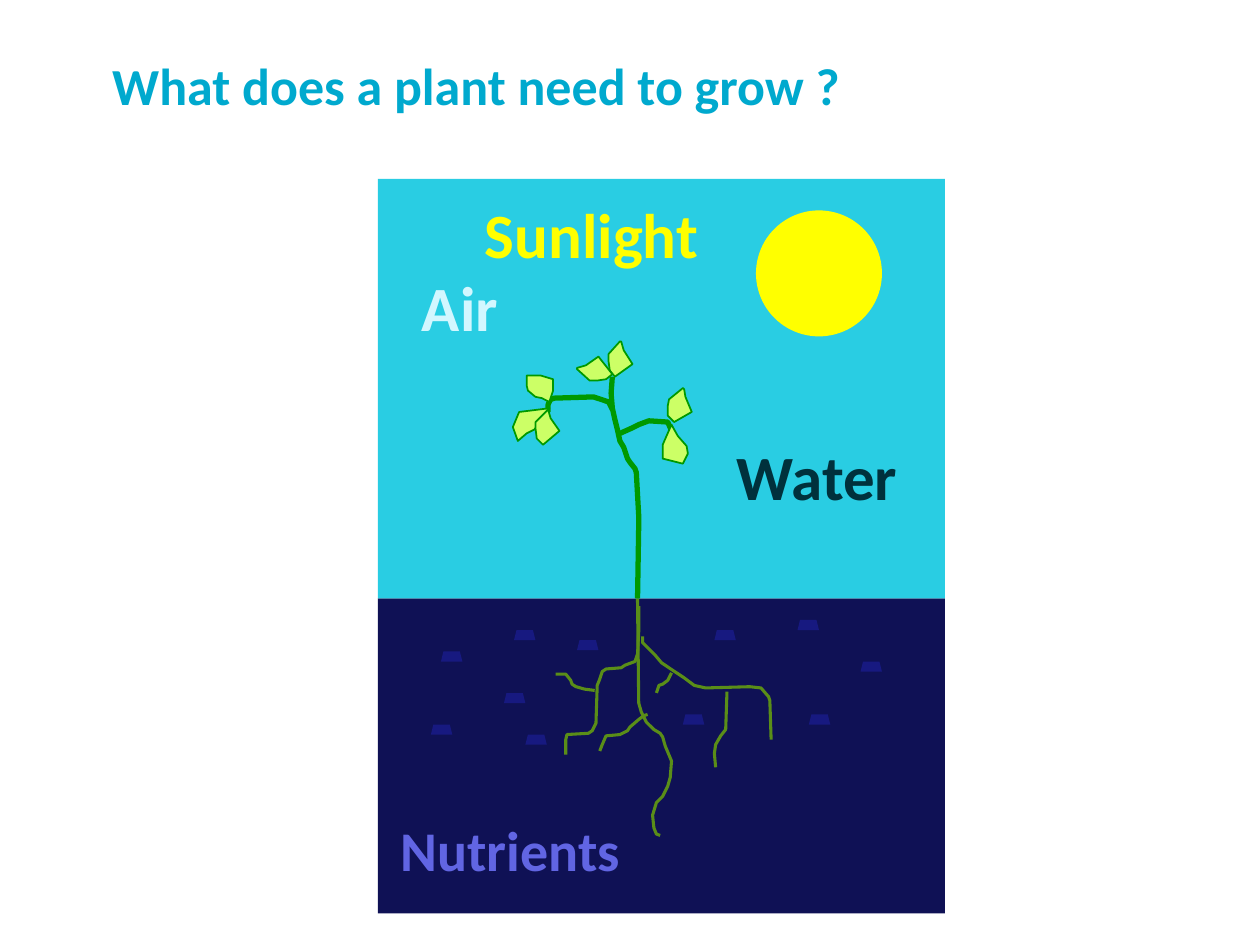
from pptx import Presentation
from pptx import util as u
from pptx.dml.color import RGBColor
from pptx.enum import shapes, text

COLORS = {
    "title": "00A9CE", "soil": "0F1155", "sky": "29CDE3", "pebble": "171980",
    "sun": "FFFF00", "air": "D2F7FF", "water": "00313C", "nutrients": "6165E3",
    "root": "5A8E18", "stem": "009900", "leaf": "CCFF66",
}
SHAPE = shapes.MSO_SHAPE


class PlantSlide:
    """Holds the style and the current slide."""

    font = "Calibri"

    def __init__(self, prs):
        self.slide = prs.slides.add_slide(prs.slide_layouts[5])

    def color(self, name):
        return RGBColor.from_string(COLORS[name])

    def style_text(self, tf, words, size, color):
        tf.text = words
        p = tf.paragraphs[0]
        p.alignment = text.PP_ALIGN.LEFT
        p.font.name = self.font
        p.font.size = u.Pt(size)
        p.font.bold = True
        p.font.color.rgb = self.color(color)

    def title(self, words, box, size):
        sp = self.slide.shapes.title
        sp.left, sp.top, sp.width, sp.height = map(u.Inches, box)
        tf = sp.text_frame
        tf.auto_size = text.MSO_AUTO_SIZE.NONE
        tf.vertical_anchor = text.MSO_ANCHOR.MIDDLE
        self.style_text(tf, words, size, "title")

    def label(self, words, box, size, color):
        tf = self.slide.shapes.add_textbox(*map(u.Inches, box)).text_frame
        tf.word_wrap = True
        tf.auto_size = text.MSO_AUTO_SIZE.SHAPE_TO_FIT_TEXT
        self.style_text(tf, words, size, color)

    def block(self, kind, box, color):
        sp = self.slide.shapes.add_shape(kind, *map(u.Inches, box))
        sp.shadow.inherit = False
        sp.fill.solid()
        sp.fill.fore_color.rgb = self.color(color)
        sp.line.fill.background()

    def outline(self, points, line, width, fill=None):
        pts = [(u.Inches(x), u.Inches(y)) for x, y in points]
        builder = self.slide.shapes.build_freeform(*pts[0])
        builder.add_line_segments(pts[1:], close=fill is not None)
        sp = builder.convert_to_shape()
        sp.shadow.inherit = False
        if fill:
            sp.fill.solid()
            sp.fill.fore_color.rgb = self.color(fill)
        else:
            sp.fill.background()
        sp.line.color.rgb = self.color(line)
        sp.line.width = u.Pt(width)


PEBBLES = [(4.08, 5), (5.67, 5), (4, 5.5), (6.33, 4.92), (3.5, 5.17), (4.58, 5.08),
           (5.42, 5.67), (3.42, 5.75), (6.83, 5.25), (4.17, 5.83), (6.42, 5.67)]

LABELS = [
    ("Nutrients", (3.08, 6.42, 2.67, 0.64), 32, "nutrients"),
    ("Sunlight", (3.75, 1.5, 2.08, 0.71), 36, "sun"),
    ("Air", (3.25, 2.08, 0.92, 0.71), 36, "air"),
    ("Water", (5.75, 3.42, 2, 0.71), 36, "water"),
]

ROOTS = [
    # left branch
    [(5.07, 4.81), (5.07, 5), (5.06, 5.19), (5.04, 5.25), (4.96, 5.28), (4.93, 5.3),
     (4.81, 5.31), (4.78, 5.33), (4.76, 5.39), (4.74, 5.44), (4.73, 5.74), (4.7, 5.8),
     (4.67, 5.82), (4.5, 5.83), (4.49, 5.87), (4.49, 5.99)],
    # main root
    [(5.06, 4.75), (5.07, 5.58), (5.09, 5.65), (5.13, 5.73), (5.19, 5.79), (5.24, 5.82),
     (5.26, 5.85), (5.28, 5.92), (5.33, 6.04), (5.32, 6.17), (5.3, 6.24), (5.26, 6.32),
     (5.21, 6.37), (5.18, 6.47), (5.19, 6.57), (5.21, 6.62), (5.24, 6.63)],
    # right branch
    [(5.1, 5.05), (5.1, 5.1), (5.14, 5.14), (5.2, 5.2), (5.25, 5.26), (5.31, 5.3),
     (5.43, 5.38), (5.51, 5.44), (5.6, 5.46), (5.95, 5.45), (6.04, 5.46), (6.1, 5.53),
     (6.11, 5.56), (6.12, 5.87)],
    # side roots
    [(5.77, 5.49), (5.76, 5.79), (5.72, 5.84), (5.68, 5.91), (5.67, 5.98), (5.68, 6.09)],
    [(4.72, 5.48), (4.64, 5.47), (4.57, 5.45), (4.54, 5.43), (4.53, 5.4), (4.49, 5.35),
     (4.41, 5.35)],
    [(5.14, 5.67), (5.11, 5.68), (5.07, 5.71), (5, 5.77), (4.98, 5.8), (4.92, 5.83),
     (4.81, 5.84), (4.78, 5.91), (4.76, 5.96)],
    [(5.33, 5.34), (5.3, 5.4), (5.26, 5.43), (5.23, 5.44), (5.21, 5.5)],
]

STEMS = [
    [(5.06, 4.75), (5.07, 4.11), (5.05, 3.75), (5.04, 3.72), (5, 3.67), (4.98, 3.64),
     (4.95, 3.55), (4.92, 3.5), (4.9, 3.41), (4.88, 3.33), (4.86, 3.24), (4.85, 3.12),
     (4.86, 2.99)],
    [(4.92, 3.44), (5.01, 3.4), (5.07, 3.37), (5.15, 3.34), (5.3, 3.35), (5.33, 3.42)],
    [(4.86, 3.25), (4.83, 3.19), (4.77, 3.17), (4.71, 3.15), (4.4, 3.16), (4.37, 3.17),
     (4.35, 3.21), (4.35, 3.27)],
]

LEAVES = [
    [(4.36, 3.24), (4.12, 3.27), (4.07, 3.39), (4.11, 3.5), (4.18, 3.44), (4.24, 3.41),
     (4.29, 3.35), (4.3, 3.31)],
    [(4.86, 2.97), (4.81, 3.01), (4.74, 3.02), (4.68, 3.02), (4.58, 2.93), (4.58, 2.92),
     (4.65, 2.9), (4.75, 2.83)],
    [(5.33, 3.37), (5.26, 3.53), (5.26, 3.64), (5.42, 3.68), (5.46, 3.6), (5.45, 3.54),
     (5.38, 3.46)],
    [(4.36, 3.19), (4.39, 3.1), (4.39, 3.01), (4.29, 2.98), (4.18, 2.98), (4.18, 3.06),
     (4.19, 3.1), (4.25, 3.15), (4.3, 3.16)],
    [(4.88, 2.99), (4.84, 2.94), (4.83, 2.87), (4.83, 2.81), (4.92, 2.71), (4.93, 2.71),
     (4.95, 2.78), (5.02, 2.89)],
    [(5.35, 3.35), (5.3, 3.3), (5.3, 3.22), (5.31, 3.17), (5.42, 3.08), (5.43, 3.09),
     (5.44, 3.15), (5.49, 3.27)],
    [(4.31, 3.53), (4.26, 3.48), (4.25, 3.4), (4.25, 3.35), (4.35, 3.25), (4.37, 3.32),
     (4.44, 3.42)],
]


def main():
    prs = Presentation()
    prs.slide_width, prs.slide_height = u.Inches(10), u.Inches(7.5)
    s = PlantSlide(prs)

    # Title
    s.title("What does a plant need to grow ?", (0.79, 0.39, 9, 0.57), 29.7)

    # Soil, sky, pebbles and sun
    s.block(SHAPE.RECTANGLE, (3, 4.75, 4.5, 2.5), "soil")
    s.block(SHAPE.RECTANGLE, (3, 1.42, 4.5, 3.33), "sky")
    for x, y in PEBBLES:
        s.block(SHAPE.TRAPEZOID, (x, y, 0.17, 0.08), "pebble")
    s.block(SHAPE.OVAL, (6, 1.67, 1, 1), "sun")

    # What the plant needs
    for words, box, size, color in LABELS:
        s.label(words, box, size, color)

    # Plant
    for root in ROOTS:
        s.outline(root, "root", 1.75)
    for stem in STEMS:
        s.outline(stem, "stem", 3)
    for leaf in LEAVES:
        s.outline(leaf, "stem", 1, fill="leaf")

    prs.save("out.pptx")


if __name__ == "__main__":
    main()
